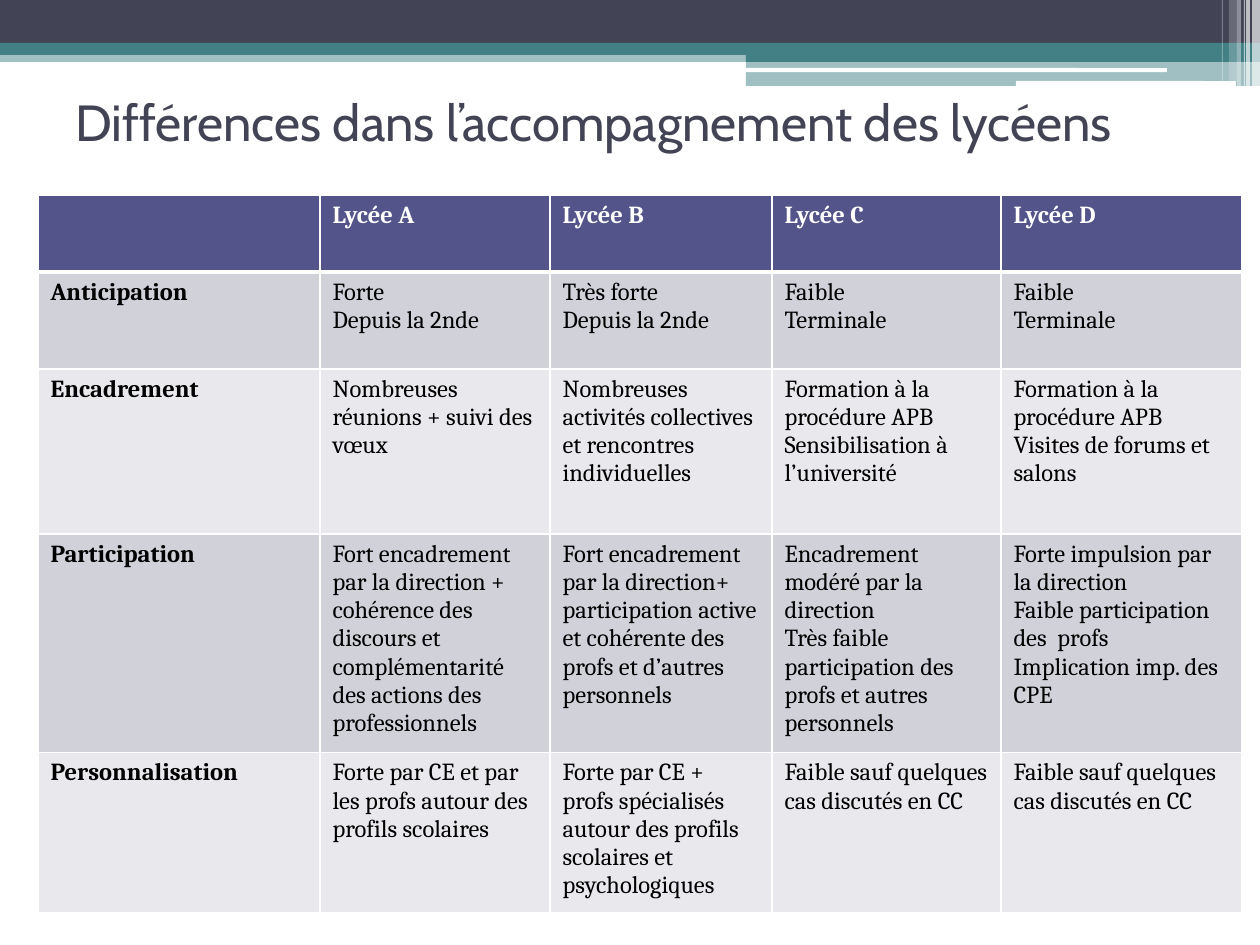
from dataclasses import dataclass

from lxml import etree
from pptx import Presentation
from pptx.dml.color import RGBColor
from pptx.enum import shapes, text
from pptx.oxml import ns
from pptx.util import Pt

EMU_PER_PX = 914400 / 126
WHITE, BLACK, SLATE, TEAL = "FFFFFF", "000000", "424456", "438086"
HEADER, BANDS = "53548A", ("D1D1DA", "E9E9ED")


@dataclass
class Bar:
    left: int
    top: int
    width: int
    height: int
    color: str
    opacity: int = 100
    rounded: bool = False


BARS = [
    # Banner across the top
    Bar(0, 50, 1260, 12, TEAL, 50),
    Bar(0, 0, 1260, 43, SLATE),
    Bar(0, 43, 1260, 12, TEAL),
    # Step on the right with its white lines
    Bar(746, 49, 514, 13, TEAL),
    Bar(746, 61, 514, 25, TEAL, 50),
    Bar(745, 68, 422, 4, WHITE, rounded=True),
    Bar(1016, 81, 220, 5, WHITE, rounded=True),
    # Vertical stripes in the corner
    Bar(1252, 0, 8, 86, WHITE, 65),
    Bar(1246, 0, 4, 86, WHITE, 65),
    Bar(1244, 0, 1, 86, WHITE, 60),
    Bar(1237, 0, 4, 86, WHITE, 40),
    Bar(1229, 0, 8, 81, WHITE, 20),
    Bar(1222, 0, 1, 81, WHITE, 30),
]

COLUMN_WIDTHS = [282, 230, 222, 229, 241]
ROW_HEIGHTS = [77, 97, 165, 216, 154]
ROWS = [
    ["", "Lycée A", "Lycée B", "Lycée C", "Lycée D"],
    ["Anticipation", "Forte\nDepuis la 2nde", "Très forte\nDepuis la 2nde",
     "Faible\nTerminale", "Faible\nTerminale"],
    ["Encadrement",
     "Nombreuses réunions + suivi des vœux",
     "Nombreuses activités collectives et rencontres individuelles",
     "Formation à la procédure APB\nSensibilisation à l’université",
     "Formation à la procédure APB\nVisites de forums et salons"],
    ["Participation",
     "Fort encadrement par la direction + cohérence des discours et "
     "complémentarité des actions des professionnels",
     "Fort encadrement par la direction+ participation active et cohérente "
     "des profs et d’autres personnels",
     "Encadrement modéré par la direction\n"
     "Très faible participation des profs et autres personnels",
     "Forte impulsion par la direction\nFaible participation des  profs\n"
     "Implication imp. des CPE"],
    ["Personnalisation",
     "Forte par CE et par les profs autour des profils scolaires",
     "Forte par CE + profs spécialisés autour des profils scolaires et "
     "psychologiques",
     "Faible sauf quelques cas discutés en CC",
     "Faible sauf quelques cas discutés en CC"],
]


def px(n: int) -> int:
    return round(n * EMU_PER_PX)


def paint(fill, color: str) -> None:
    fill.solid()
    fill.fore_color.rgb = RGBColor.from_string(color)


def style_text(tf, font: str, size: int, color: str, bold: bool = False) -> None:
    for p in tf.paragraphs:
        for r in p.runs:
            r.font.name, r.font.size, r.font.bold = font, Pt(size), bold
            r.font.color.rgb = RGBColor.from_string(color)


def draw_bar(slide, bar: Bar) -> None:
    kinds = shapes.MSO_SHAPE
    kind = kinds.ROUNDED_RECTANGLE if bar.rounded else kinds.RECTANGLE
    sp = slide.shapes.add_shape(
        kind, px(bar.left), px(bar.top), px(bar.width), px(bar.height))
    sp.shadow.inherit = False
    sp.line.fill.background()
    paint(sp.fill, bar.color)
    if bar.opacity < 100:
        color = sp.fill._xPr.find(".//" + ns.qn("a:srgbClr"))
        etree.SubElement(color, ns.qn("a:alpha"), val=str(bar.opacity * 1000))


def draw_title(slide, title: str) -> None:
    sp = slide.shapes.add_textbox(px(63), px(48), px(1134), px(147))
    tf = sp.text_frame
    tf.word_wrap = True
    tf.vertical_anchor = text.MSO_ANCHOR.MIDDLE
    tf.text = title
    style_text(tf, "Cabin", 29, SLATE)


def set_borders(cell, top: int, bottom: int) -> None:
    """Give a cell white borders; widths are in points."""
    tc_pr = cell._tc.get_or_add_tcPr()
    sides = [("lnL", 1), ("lnR", 1), ("lnT", top), ("lnB", bottom)]
    for i, (side, width) in enumerate(sides):
        ln = etree.Element(ns.qn("a:" + side), w=str(Pt(width)))
        fill = etree.SubElement(ln, ns.qn("a:solidFill"))
        etree.SubElement(fill, ns.qn("a:srgbClr"), val=WHITE)
        tc_pr.insert(i, ln)


def draw_table(slide) -> None:
    frame = slide.shapes.add_table(
        len(ROWS), len(COLUMN_WIDTHS), px(38), px(195),
        px(sum(COLUMN_WIDTHS)), px(sum(ROW_HEIGHTS)))
    table = frame.table
    for column, width in zip(table.columns, COLUMN_WIDTHS):
        column.width = px(width)
    for row, height in zip(table.rows, ROW_HEIGHTS):
        row.height = px(height)
    for i, row in enumerate(ROWS):
        for j, words in enumerate(row):
            cell = table.cell(i, j)
            cell.text_frame.text = words
            style_text(cell.text_frame, "Cambria", 14,
                       BLACK if i else WHITE, bold=i == 0 or j == 0)
            paint(cell.fill, BANDS[(i - 1) % 2] if i else HEADER)
            set_borders(cell, top=3 if i == 1 else 1, bottom=1 if i else 3)


def main() -> None:
    prs = Presentation()
    prs.slide_width, prs.slide_height = px(1260), px(945)
    slide = prs.slides.add_slide(prs.slide_layouts[6])
    for bar in BARS:
        draw_bar(slide, bar)
    draw_title(slide, "Différences dans l’accompagnement des lycéens")
    draw_table(slide)
    prs.save("out.pptx")


if __name__ == "__main__":
    main()
